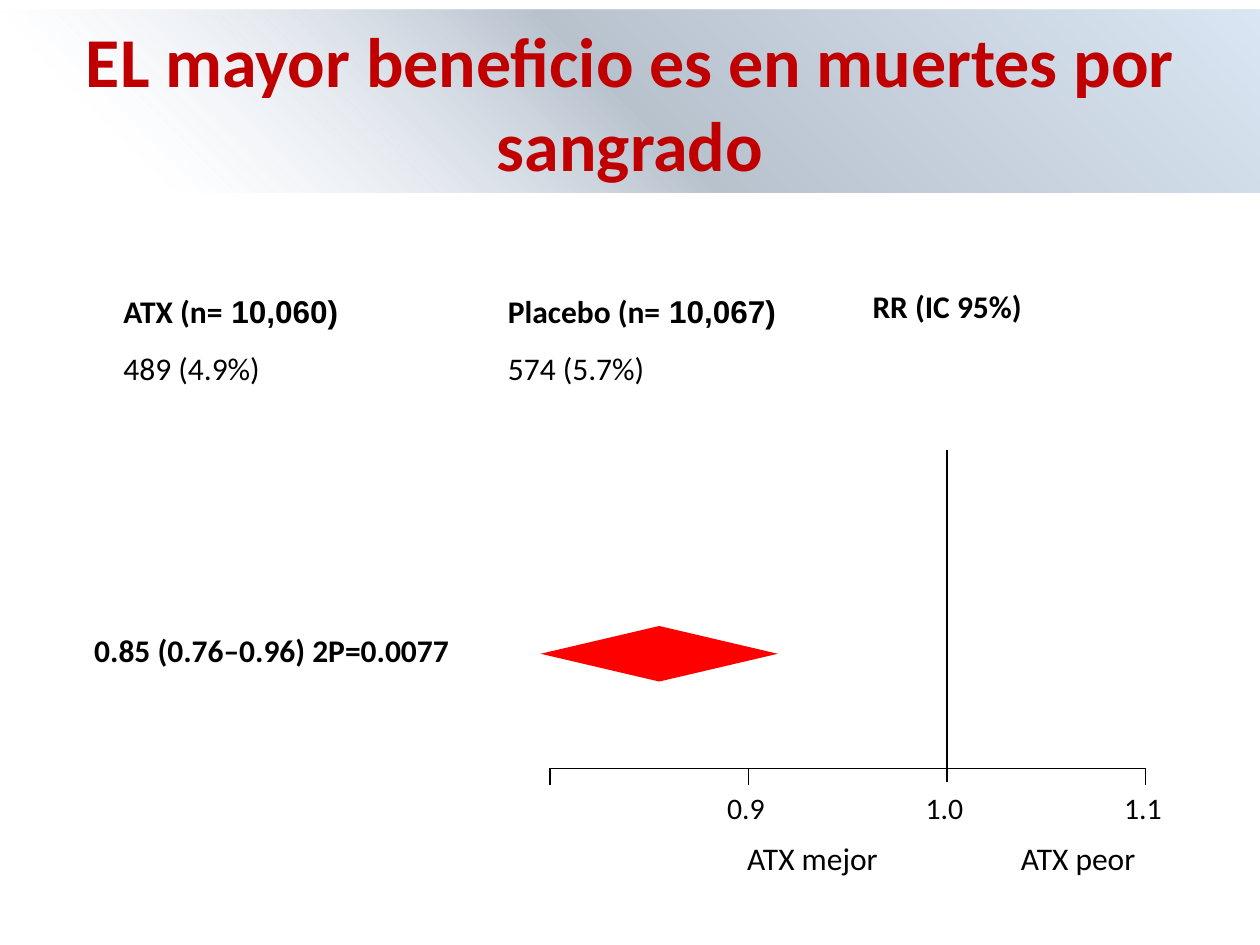
from lxml import etree
from pptx import Presentation
from pptx import util as u
from pptx.dml.color import RGBColor
from pptx.enum import shapes, text
from pptx.oxml.ns import qn

CENTER = text.PP_ALIGN.CENTER


def color(value):
    return RGBColor.from_string(value)


def write(p, content, size=18, font="Calibri", bold=False, fill="000000"):
    """Add one formatted run to a paragraph."""
    r = p.add_run()
    r.text = content
    r.font.size = u.Pt(size)
    r.font.name = font
    r.font.bold = bold
    r.font.color.rgb = color(fill)


class ForestSlide:
    ink = "000000"
    accent = "FF0000"
    title_color = "C00000"

    def __init__(self, prs):
        self.s = prs.slides.add_slide(prs.slide_layouts[6])

    def text_box(self, x, y, w, h):
        """Add an empty text box without margins and return its text frame."""
        sp = self.s.shapes.add_textbox(u.Cm(x), u.Cm(y), u.Cm(w), u.Cm(h))
        tf = sp.text_frame
        tf.margin_left = tf.margin_right = tf.margin_top = tf.margin_bottom = 0
        tf.word_wrap = True
        tf.auto_size = text.MSO_AUTO_SIZE.SHAPE_TO_FIT_TEXT
        return tf

    def label(self, content, x, y, w, h=0.76, align=None, **style):
        p = self.text_box(x, y, w, h).paragraphs[0]
        p.alignment = align
        write(p, content, **style)

    def group(self, name, total, events, x, w):
        """Write a study arm: its bold heading and the events below."""
        tf = self.text_box(x, 5.51, w, 2.31)
        heading, result = tf.paragraphs[0], tf.add_paragraph()
        heading.line_spacing = result.line_spacing = 1.5
        write(heading, f"{name} (n=", bold=True)
        write(heading, f" {total})", font="Arial", bold=True)
        write(result, events)

    def line(self, x1, y1, x2, y2, width=0.75):
        c = self.s.shapes.add_connector(
            shapes.MSO_CONNECTOR.STRAIGHT, u.Cm(x1), u.Cm(y1), u.Cm(x2), u.Cm(y2))
        c.line.color.rgb = color(self.ink)
        c.line.width = u.Pt(width)
        etree.SubElement(c._element.spPr, qn("a:effectLst"))

    def shape(self, kind, x, y, w, h):
        sp = self.s.shapes.add_shape(kind, u.Cm(x), u.Cm(y), u.Cm(w), u.Cm(h))
        sp.shadow.inherit = False
        sp.line.fill.background()
        return sp

    def diamond(self, x, y, w, h):
        sp = self.shape(shapes.MSO_SHAPE.DIAMOND, x, y, w, h)
        sp.fill.solid()
        sp.fill.fore_color.rgb = color(self.accent)

    def title(self, content):
        sp = self.shape(shapes.MSO_SHAPE.RECTANGLE, 0, 0.2, 25.4, 3.68)
        self.gradient(sp, [(12, "DCE6F2", 0), (50, "B8C2CD", 100),
                           (100, "DAE6F3", 100)], 45)
        tf = sp.text_frame
        tf.word_wrap = True
        tf.vertical_anchor = text.MSO_ANCHOR.MIDDLE
        p = tf.paragraphs[0]
        p.alignment = CENTER
        write(p, content, size=40, bold=True, fill=self.title_color)

    def gradient(self, sp, stops, angle):
        """Fill with stops of (position %, colour, opacity %)."""
        sp.fill.gradient()
        sp.fill.gradient_angle = angle
        stop_list = sp._element.spPr.find(qn("a:gradFill")).find(qn("a:gsLst"))
        for old in list(stop_list):
            stop_list.remove(old)
        for position, value, opacity in stops:
            gs = etree.SubElement(stop_list, qn("a:gs"), pos=str(position * 1000))
            clr = etree.SubElement(gs, qn("a:srgbClr"), val=value)
            if opacity < 100:
                etree.SubElement(clr, qn("a:alpha"), val=str(opacity * 1000))

    def axis(self, x, y, step, labels):
        """Draw the ratio axis, with the line of no effect at 1.0."""
        self.line(x, y, x + step * (len(labels) - 1), y)
        for i, content in enumerate(labels):
            tick = x + step * i
            if content == "1.0":
                self.line(tick, y + 0.28, tick, 9.07, width=1)
            else:
                self.line(tick, y + 0.33, tick, y)
            if content:
                self.label(content, tick - 0.43, y + 0.44, 0.95, 0.74, size=17)


def main():
    prs = Presentation()
    prs.slide_width, prs.slide_height = u.Cm(25.4), u.Cm(19.05)
    slide = ForestSlide(prs)
    slide.title("EL mayor beneficio es en muertes por sangrado")
    slide.group("ATX", "10,060", "489 (4.9%)", 2.49, 5.79)
    slide.group("Placebo", "10,067", "574 (5.7%)", 10.24, 6.65)
    slide.label("RR (IC 95%)", 13.89, 5.79, 10.41, align=CENTER, bold=True)
    slide.label("0.85 (0.76–0.96) 2P=0.0077", 1.9, 12.73, 8.53, bold=True)
    slide.diamond(10.9, 12.62, 4.78, 1.12)
    slide.axis(11.09, 15.49, 4, ["", "0.9", "1.0", "1.1"])
    slide.label("ATX mejor", 14.4, 16.92, 3.96, align=CENTER)
    slide.label(" ATX peor", 19.66, 16.92, 4.01, align=CENTER)
    prs.save("out.pptx")


if __name__ == "__main__":
    main()
